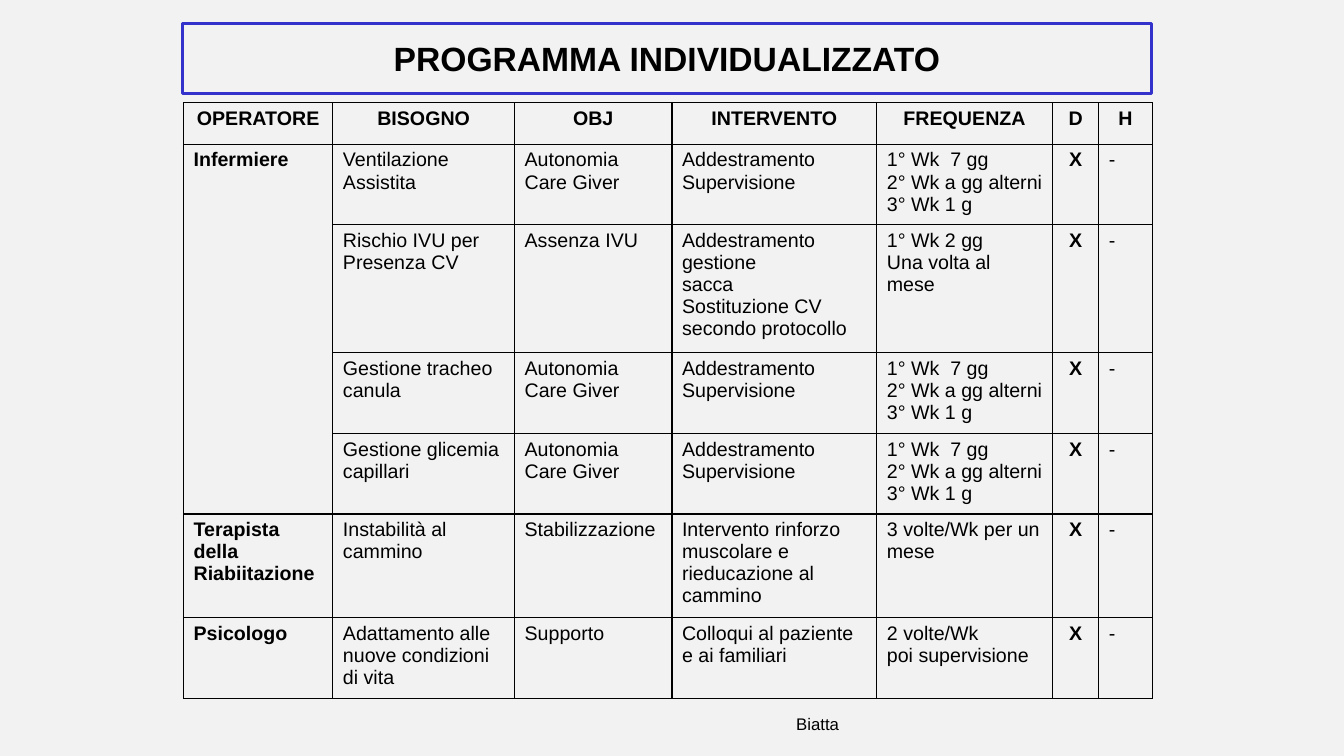
import pptx
import pptx.util
import pptx.dml.color
import pptx.enum.text
import pptx.oxml
import pptx.oxml.ns

Inches = pptx.util.Inches
Pt = pptx.util.Pt
RGBColor = pptx.dml.color.RGBColor
ALIGN = pptx.enum.text.PP_ALIGN
ANCHOR = pptx.enum.text.MSO_ANCHOR

GREY = RGBColor(0xF2, 0xF2, 0xF2)
BLUE = RGBColor(0x33, 0x33, 0xCC)
BLACK = RGBColor(0, 0, 0)

WIDTHS = [1.48, 1.8, 1.56, 2.03, 1.74, 0.46, 0.53]
HEIGHTS = [0.41, 0.8, 1.27, 0.8, 0.8, 1.03, 0.8]
WEEKS = "1° Wk  7 gg\n2° Wk a gg alterni\n3° Wk 1 g"
TRAIN = "Addestramento\nSupervisione"
HEAD = ["OPERATORE", "BISOGNO", "OBJ", "INTERVENTO", "FREQUENZA", "D", "H"]
# The last two columns, D and H, hold the same marks in every row
PLANS = [
    ["Infermiere", "Ventilazione\nAssistita", "Autonomia\nCare Giver", TRAIN, WEEKS],
    ["", "Rischio IVU per\nPresenza CV", "Assenza IVU",
     "Addestramento gestione\nsacca\nSostituzione CV secondo protocollo",
     "1° Wk 2 gg\nUna volta al mese"],
    ["", "Gestione tracheo canula", "Autonomia Care Giver", TRAIN, WEEKS],
    ["", "Gestione glicemia capillari", "Autonomia Care Giver", TRAIN, WEEKS],
    ["Terapista della\nRiabiitazione", "Instabilità al cammino", "Stabilizzazione",
     "Intervento rinforzo muscolare e rieducazione al cammino",
     "3 volte/Wk per un mese"],
    ["Psicologo", "Adattamento alle nuove condizioni di vita", "Supporto",
     "Colloqui al paziente e ai familiari", "2 volte/Wk\npoi supervisione"],
]
ROWS = [HEAD] + [plan + ["X", "-"] for plan in PLANS]


def write(frame, text, size, bold=False, align=ALIGN.LEFT):
    frame.text = text
    frame.word_wrap = True
    for para in frame.paragraphs:
        para.alignment = align
        for run in para.runs:
            run.font.name = "Arial"
            run.font.size = Pt(size)
            run.font.bold = bold
            run.font.color.rgb = BLACK


def border(cell):
    props = cell._tc.get_or_add_tcPr()
    space = pptx.oxml.ns.nsdecls("a")
    for spot, side in enumerate(["lnL", "lnR", "lnT", "lnB"]):
        props.insert(spot, pptx.oxml.parse_xml(
            f'<a:{side} {space} w="{Pt(1)}"><a:solidFill>'
            f'<a:srgbClr val="{BLACK}"/></a:solidFill></a:{side}>'))


def add_title(slide, left, top, width, height):
    title = slide.shapes.title
    title.left, title.top = Inches(left), Inches(top)
    title.width, title.height = Inches(width), Inches(height)
    title.fill.solid()
    title.fill.fore_color.rgb = GREY
    title.line.color.rgb = BLUE
    title.line.width = Pt(2)
    frame = title.text_frame
    frame.auto_size = pptx.enum.text.MSO_AUTO_SIZE.NONE
    frame.vertical_anchor = ANCHOR.MIDDLE
    write(frame, "PROGRAMMA INDIVIDUALIZZATO", 24, True, ALIGN.CENTER)


def add_plan(slide, left, top, width, height):
    table = slide.shapes.add_table(
        len(ROWS), len(HEAD), Inches(left), Inches(top),
        Inches(width), Inches(height)).table
    table.first_row = table.horz_banding = False
    # Share the box out in proportion to the column and row sizes
    for col, size in zip(table.columns, WIDTHS):
        col.width = Inches(width * size / sum(WIDTHS))
    for row, size in zip(table.rows, HEIGHTS):
        row.height = Inches(height * size / sum(HEIGHTS))
    for r, texts in enumerate(ROWS):
        for c, text in enumerate(texts):
            cell = table.cell(r, c)
            cell.fill.solid()
            cell.fill.fore_color.rgb = GREY
            border(cell)
            mid = r == 0 or c == 5
            write(cell.text_frame, text, 14, mid or c == 0,
                  ALIGN.CENTER if mid else ALIGN.LEFT)
    # One nurse cell spans four needs
    table.cell(1, 0).merge(table.cell(4, 0))


def add_foot(slide, left, top, width, height):
    box = slide.shapes.add_textbox(
        Inches(left), Inches(top), Inches(width), Inches(height))
    write(box.text_frame, "Biatta", 12, align=ALIGN.CENTER)


def main():
    deck = pptx.Presentation()
    deck.slide_width, deck.slide_height = Inches(13.33), Inches(7.5)
    slide = deck.slides.add_slide(deck.slide_layouts[5])
    slide.background.fill.solid()
    slide.background.fill.fore_color.rgb = GREY
    add_title(slide, 1.81, 0.23, 9.61, 0.7)
    add_plan(slide, 1.82, 1.02, 9.61, 5.91)
    add_foot(slide, 3.56, 7.03, 9.1, 0.4)
    deck.save("out.pptx")


if __name__ == "__main__":
    main()
